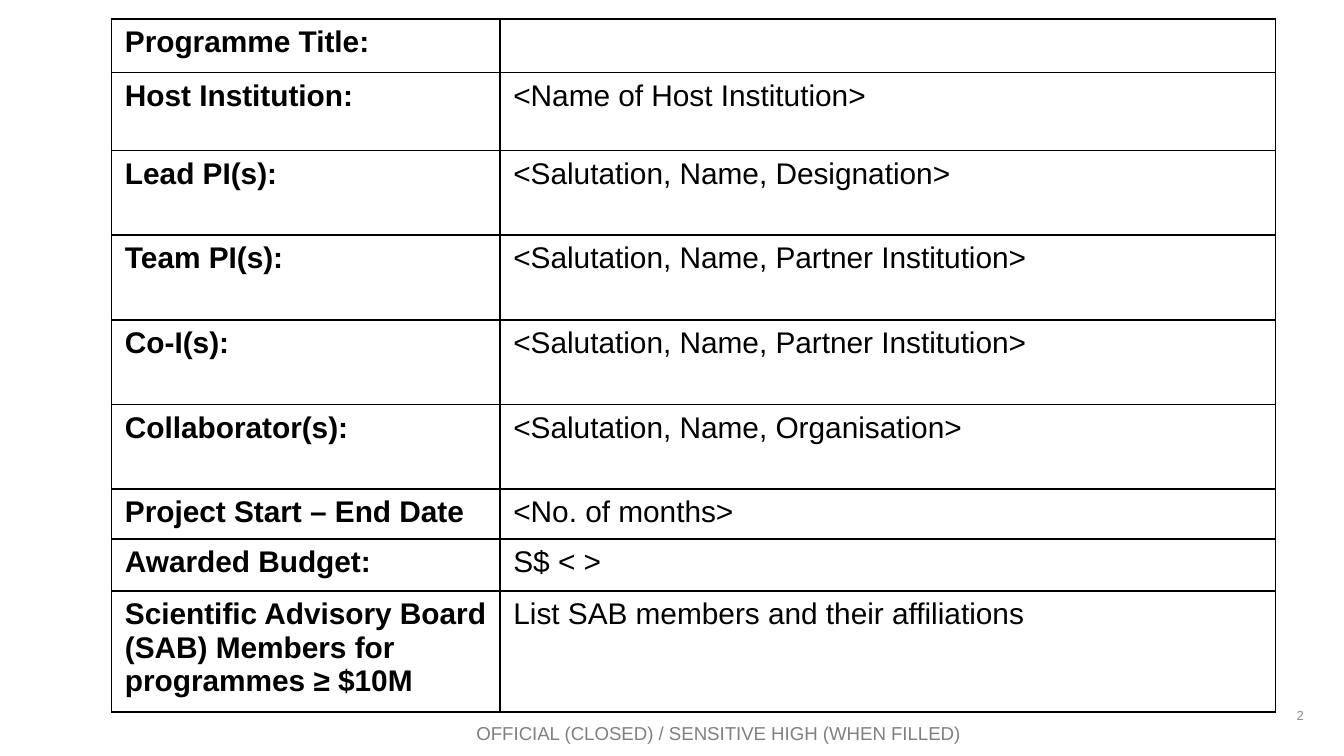
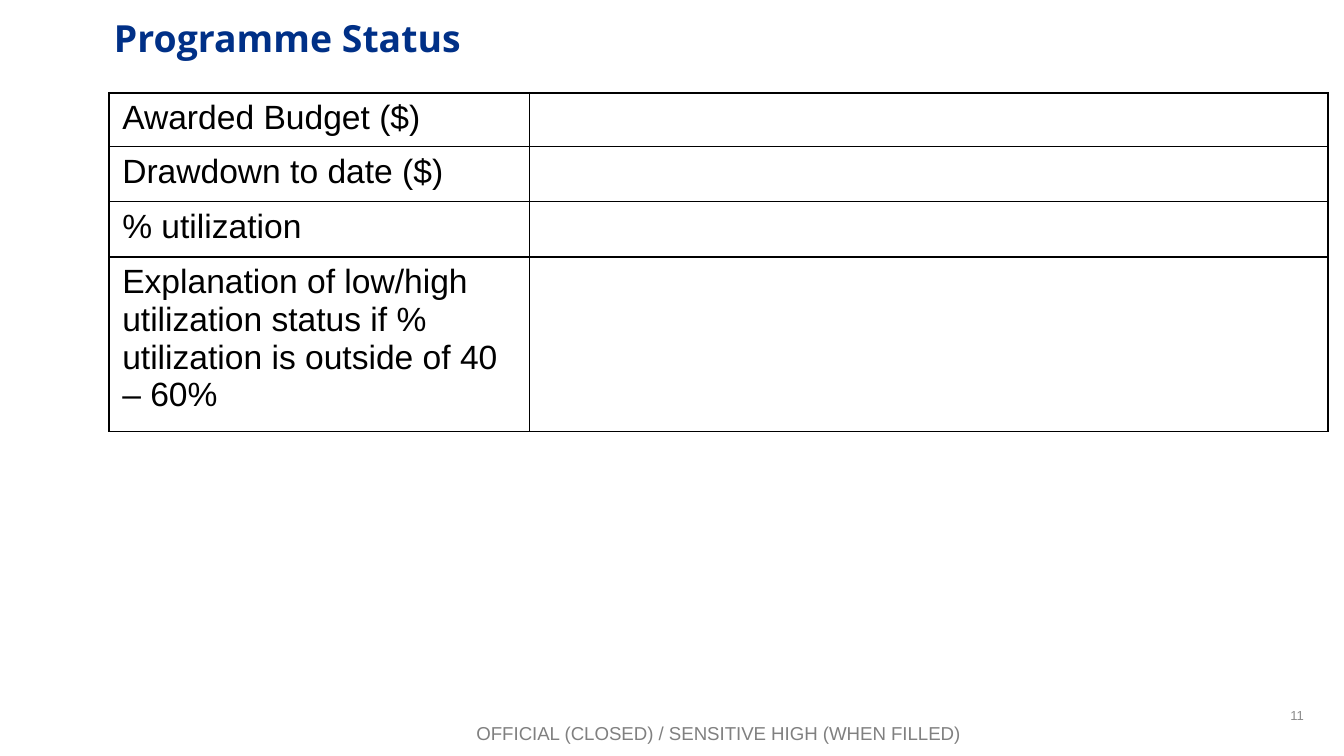
"""Build the programme details and programme status slides."""
from lxml import etree
from pptx import Presentation
from pptx.dml.color import RGBColor
from pptx.enum.text import MSO_ANCHOR, PP_ALIGN
from pptx.oxml.ns import qn
from pptx.util import Inches, Pt

BLACK = RGBColor(0x00, 0x00, 0x00)
NAVY = RGBColor(0x00, 0x30, 0x87)
NUMBER_GREY = RGBColor(0x8C, 0x8C, 0x8C)
FOOTER_GREY = RGBColor(0x80, 0x80, 0x80)
LEFT, CENTER, RIGHT = PP_ALIGN.LEFT, PP_ALIGN.CENTER, PP_ALIGN.RIGHT
TOP, MIDDLE = MSO_ANCHOR.TOP, MSO_ANCHOR.MIDDLE

BODY_FONT = "Arial"
TITLE_FONT = "Open Sans"
WIDTH = Inches(10)
HEIGHT = WIDTH * 9 // 16
GRID_COLUMNS = 100
FOOTER = "OFFICIAL (CLOSED) / SENSITIVE HIGH (WHEN FILLED)"

PERSON = "<Salutation, Name, Partner Institution>"
DETAILS = [
    ("Programme Title:", "", 3.9),
    ("Host Institution:", "<Name of Host Institution>", 5.8),
    ("Lead PI(s):", "<Salutation, Name, Designation>", 6.3),
    ("Team PI(s):", PERSON, 6.3),
    ("Co-I(s):", PERSON, 6.3),
    ("Collaborator(s):", "<Salutation, Name, Organisation>", 6.3),
    ("Project Start – End Date", "<No. of months>", 3.7),
    ("Awarded Budget:", "S$ < >", 3.9),
    ("Scientific Advisory Board (SAB) Members for programmes ≥ $10M",
     "List SAB members and their affiliations", 9),
]
STATUS = [
    ("Awarded Budget ($)", "", 3.7),
    ("Drawdown to date ($)", "", 4.1),
    ("% utilization", "", 4.1),
    ("Explanation of low/high utilization status if % utilization"
     " is outside of 40 – 60%", "", 12.2),
]


def grid(units):
    """Convert square grid units to a slide length."""
    return round(WIDTH * units / GRID_COLUMNS)


def style_text(tf, size, color, font=BODY_FONT, bold=False, align=LEFT):
    """Format every run of a text frame."""
    for p in tf.paragraphs:
        p.alignment = align
        for r in p.runs:
            r.font.name = font
            r.font.size = Pt(size)
            r.font.bold = bold
            r.font.color.rgb = color


def add_text(slide, text, box, size, color, anchor=TOP, **style):
    """Add a wrapped text box placed in grid units."""
    tf = slide.shapes.add_textbox(*map(grid, box)).text_frame
    tf.word_wrap = True
    tf.vertical_anchor = anchor
    tf.text = text
    style_text(tf, size, color, **style)


def add_borders(cell):
    """Draw a thin black line on each side of a cell."""
    tcPr = cell._tc.get_or_add_tcPr()
    for side in ("a:lnL", "a:lnR", "a:lnT", "a:lnB"):
        ln = etree.SubElement(tcPr, qn(side), w=str(Pt(1)))
        fill = etree.SubElement(ln, qn("a:solidFill"))
        etree.SubElement(fill, qn("a:srgbClr"), val=str(BLACK))


def add_form(slide, rows, left, top, widths, size, bold_labels=False):
    """Add a bordered table of labels and values."""
    heights = [height for _, _, height in rows]
    box = (left, top, sum(widths), sum(heights))
    table = slide.shapes.add_table(len(rows), len(widths), *map(grid, box)).table
    table.first_row = table.horz_banding = False
    for column, width in zip(table.columns, widths):
        column.width = grid(width)
    for row, (label, value, height) in zip(table.rows, rows):
        row.height = grid(height)
        for i, (cell, text) in enumerate(zip(row.cells, (label, value))):
            cell.text = text
            style_text(cell.text_frame, size, BLACK, bold=bold_labels and i == 0)
            add_borders(cell)
            cell.fill.background()


def add_slide(prs, number):
    """Add a blank slide with its page number and footer."""
    slide = prs.slides.add_slide(prs.slide_layouts[6])
    add_text(slide, str(number), (74.7, 51.7, 23.3, 3), 7, NUMBER_GREY,
             anchor=MIDDLE, align=RIGHT)
    add_text(slide, FOOTER, (6.8, 53.2, 93.3, 2.7), 10, FOOTER_GREY, align=CENTER)
    return slide


def add_title(slide, text):
    """Add the slide title."""
    add_text(slide, text, (7.5, 0.6, 86.6, 7.9), 20, NAVY,
             font=TITLE_FONT, bold=True)


def main():
    """Build and save the presentation."""
    prs = Presentation()
    prs.slide_width, prs.slide_height = WIDTH, HEIGHT

    details = add_slide(prs, 2)
    add_form(details, DETAILS, 8.3, 1.4, (28.9, 57.7), 16, bold_labels=True)

    status = add_slide(prs, 11)
    add_title(status, "Programme Status")
    add_form(status, STATUS, 8.1, 6.9, (31.3, 59.4), 18)

    prs.save("out.pptx")


if __name__ == "__main__":
    main()
